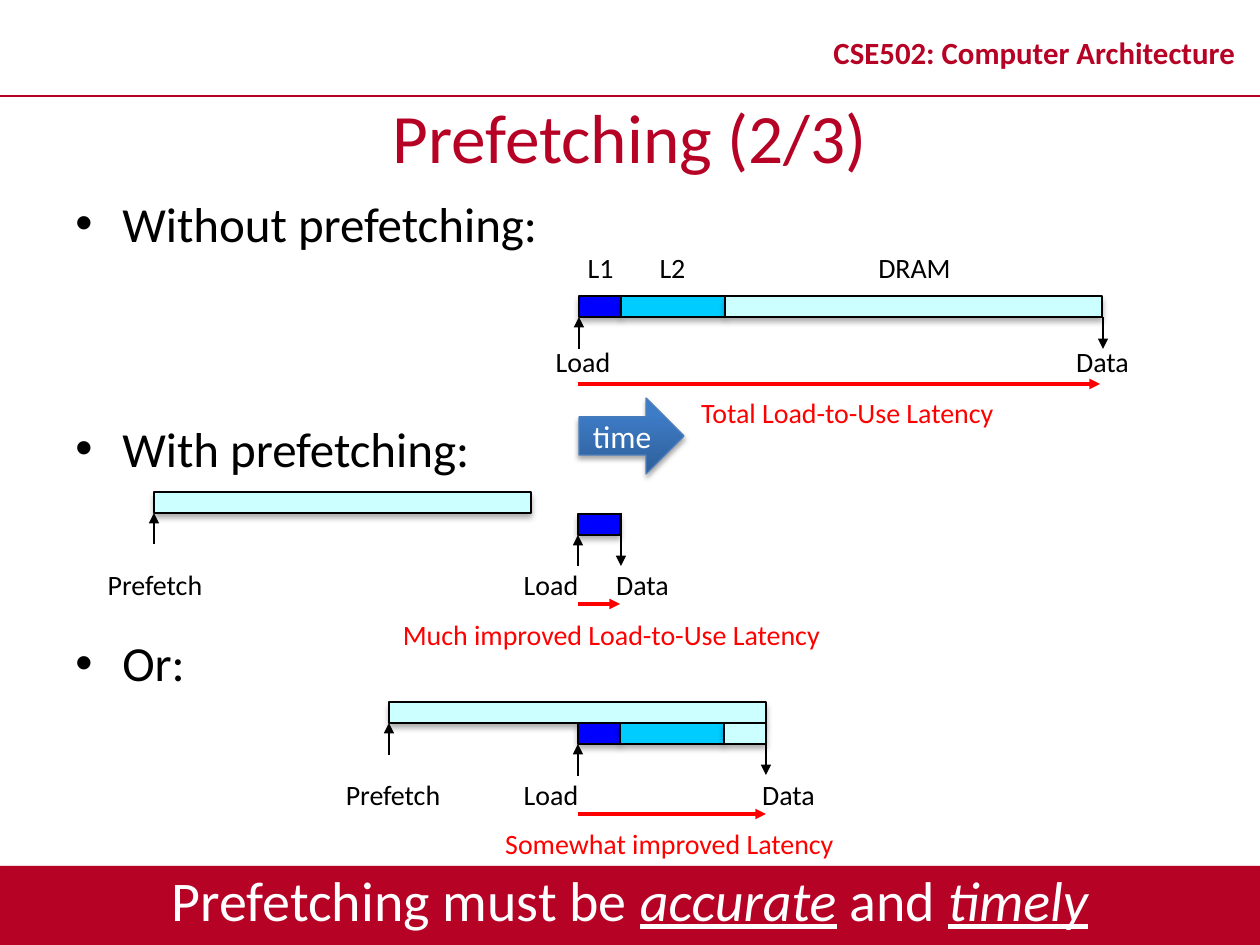
from lxml.etree import SubElement
from pptx import Presentation
from pptx.dml.color import RGBColor
from pptx.enum.shapes import MSO_CONNECTOR, MSO_SHAPE
from pptx.enum.text import MSO_ANCHOR, PP_ALIGN
from pptx.oxml.ns import qn
from pptx.util import Pt

EMU_PER_PX = 914400 / 126
SLIDE_W, SLIDE_H = 1260, 945
FONT = "Calibri"
CRIMSON, BLACK, WHITE, RED = "B60225", "000000", "FFFFFF", "FF0000"

COURSE = "CSE502: Computer Architecture"
TITLE = "Prefetching (2/3)"
# Bullet text, space before in points
BULLETS = [("Without prefetching:", 0), ("With prefetching:", 95), ("Or:", 89)]
# Text, emphasised
TAKEAWAY = [("Prefetching must be ", False), ("accurate", True),
            (" and ", False), ("timely", True)]

# Width, colour of each stage of a memory access
L1, L2, DRAM = (42, "0000FF"), (104, "00CCFF"), (377, "CCFFFF")
DRAM_REST = (42, "CCFFFF")
BAR_H = 21
# Left, top, stages
BARS = [
    (579, 296, [L1, L2, DRAM]),
    (154, 492, [DRAM]),
    (578, 514, [L1]),
    (389, 702, [DRAM]),
    (578, 723, [L1, L2, DRAM_REST]),
]
# x, start y, end y
EVENT_ARROWS = [
    (579, 349, 317), (1103, 317, 349),
    (154, 544, 513), (578, 566, 535), (621, 513, 566),
    (389, 755, 723), (578, 776, 744), (766, 723, 775),
]
# End x, y
LATENCY_START = 578
LATENCY_ARROWS = [(1100, 384), (620, 604), (766, 814)]
# Text, left, top, width
LABEL_H = 47
LABELS = [
    ("L1", 571, 244, 59), ("L2", 621, 244, 103), ("DRAM", 726, 244, 377),
    ("Load", 542, 338, 82), ("Data", 1062, 338, 81),
    ("Prefetch", 95, 561, 120), ("Load", 510, 561, 82), ("Data", 602, 561, 81),
    ("Prefetch", 333, 771, 120), ("Load", 510, 771, 82), ("Data", 748, 771, 81),
]
LATENCY_LABELS = [
    ("Total Load-to-Use Latency", 683, 389, 329),
    ("Much improved Load-to-Use Latency", 386, 611, 451),
    ("Somewhat improved Latency", 491, 820, 357),
]


def px(*lengths):
    return [round(length * EMU_PER_PX) for length in lengths]


def rgb(color):
    return RGBColor.from_string(color)


def style(font, size, color, bold=None):
    font.name, font.size, font.bold = FONT, Pt(size), bold
    font.color.rgb = rgb(color)


def add_shadow(shape, blur, distance, opacity):
    """Cast a black shadow straight down; lengths in points, opacity in percent."""
    effects = SubElement(shape._element.spPr, qn("a:effectLst"))
    shadow = SubElement(effects, qn("a:outerShdw"), blurRad=str(Pt(blur)),
                        dist=str(Pt(distance)), dir="5400000", rotWithShape="0")
    black = SubElement(shadow, qn("a:srgbClr"), val=BLACK)
    SubElement(black, qn("a:alpha"), val=str(opacity * 1000))


def add_box(page, kind, area, fill=None, line=None):
    box = page.shapes.add_shape(kind, *px(*area))
    if fill:
        box.fill.solid()
        box.fill.fore_color.rgb = rgb(fill)
    if line:
        box.line.color.rgb = rgb(line)
        box.line.width = Pt(0.75)
    else:
        box.line.fill.background()
    return box


def add_line(page, start, end, color, width, arrow=True):
    line = page.shapes.add_connector(MSO_CONNECTOR.STRAIGHT, *px(*start, *end))
    line.line.color.rgb = rgb(color)
    line.line.width = Pt(width)
    if arrow:
        SubElement(line.line._get_or_add_ln(), qn("a:tailEnd"), type="triangle")
    SubElement(line._element.spPr, qn("a:effectLst"))


def add_text(page, text, area, size, color, bold=None, wrap=True):
    box = page.shapes.add_textbox(*px(*area))
    box.text_frame.word_wrap = wrap
    para = box.text_frame.paragraphs[0]
    para.text = text
    para.alignment = PP_ALIGN.CENTER
    style(para.font, size, color, bold)
    return box


def add_frame(page):
    bar = add_box(page, MSO_SHAPE.RECTANGLE, (0, 866, SLIDE_W, 79), CRIMSON)
    add_shadow(bar, 3.1, 1.8, 35)
    add_line(page, (0, 96), (SLIDE_W, 96), CRIMSON, 1, arrow=False)
    course = add_text(page, COURSE, (809, 16, 451, 79), 17.6, CRIMSON, bold=True)
    course.text_frame.vertical_anchor = MSO_ANCHOR.MIDDLE
    course.text_frame.paragraphs[0].line_spacing = 0.8

    title = page.shapes.title
    title.left, title.top, title.width, title.height = px(0, 96, SLIDE_W, 79)
    title.text_frame.text = TITLE
    title.text_frame.vertical_anchor = MSO_ANCHOR.MIDDLE
    title.text_frame.paragraphs[0].alignment = PP_ALIGN.CENTER
    style(title.text_frame.paragraphs[0].runs[0].font, 39.6, CRIMSON)


def add_bullets(page):
    box = page.shapes.add_textbox(*px(63, 187, 1134, 674))
    frame = box.text_frame
    frame.word_wrap = True
    indent = px(47)[0]
    for index, (text, space) in enumerate(BULLETS):
        para = frame.add_paragraph() if index else frame.paragraphs[0]
        para.text = text
        para.space_before = Pt(space)
        props = para._p.get_or_add_pPr()
        props.set("marL", str(indent))
        props.set("indent", str(-indent))
        SubElement(props, qn("a:buFont"), typeface="Arial")
        SubElement(props, qn("a:buChar"), char="•")
        style(para.font, 28, BLACK)


def add_timelines(page):
    for left, top, stages in BARS:
        for width, color in stages:
            bar = add_box(page, MSO_SHAPE.RECTANGLE,
                          (left, top, width, BAR_H), color, BLACK)
            add_shadow(bar, 3.5, 2.2, 32)
            left += width
    for x, start, end in EVENT_ARROWS:
        add_line(page, (x, start), (x, end), BLACK, 0.75)
    for end, y in LATENCY_ARROWS:
        add_line(page, (LATENCY_START, y), (end, y), RED, 2)
    for labels, color in ((LABELS, BLACK), (LATENCY_LABELS, RED)):
        for text, left, top, width in labels:
            add_text(page, text, (left, top, width, LABEL_H), 16, color, wrap=False)


def add_time_arrow(page):
    arrow = add_box(page, MSO_SHAPE.RIGHT_ARROW, (579, 398, 105, 76), line="4B7EBC")
    arrow.fill.gradient()
    arrow.fill.gradient_angle = 90
    for stop, color, position in zip(arrow.fill.gradient_stops,
                                     ("2F5F99", "3D7CC7"), (0, 0.8)):
        stop.color.rgb = rgb(color)
        stop.position = position
    add_shadow(arrow, 3.1, 1.8, 35)
    arrow.text_frame.word_wrap = False
    arrow.text_frame.vertical_anchor = MSO_ANCHOR.MIDDLE
    para = arrow.text_frame.paragraphs[0]
    para.text = "time"
    para.alignment = PP_ALIGN.CENTER
    style(para.font, 18, WHITE)


def add_takeaway(page):
    box = add_text(page, "", (0, 859, SLIDE_W, 79), 32, WHITE)
    for text, emphasised in TAKEAWAY:
        span = box.text_frame.paragraphs[0].add_run()
        span.text = text
        style(span.font, 32, WHITE)
        span.font.italic = span.font.underline = emphasised


def main():
    deck = Presentation()
    deck.slide_width, deck.slide_height = px(SLIDE_W, SLIDE_H)
    page = deck.slides.add_slide(deck.slide_layouts[5])
    add_frame(page)
    add_bullets(page)
    add_timelines(page)
    add_time_arrow(page)
    add_takeaway(page)
    deck.save("out.pptx")


if __name__ == "__main__":
    main()
